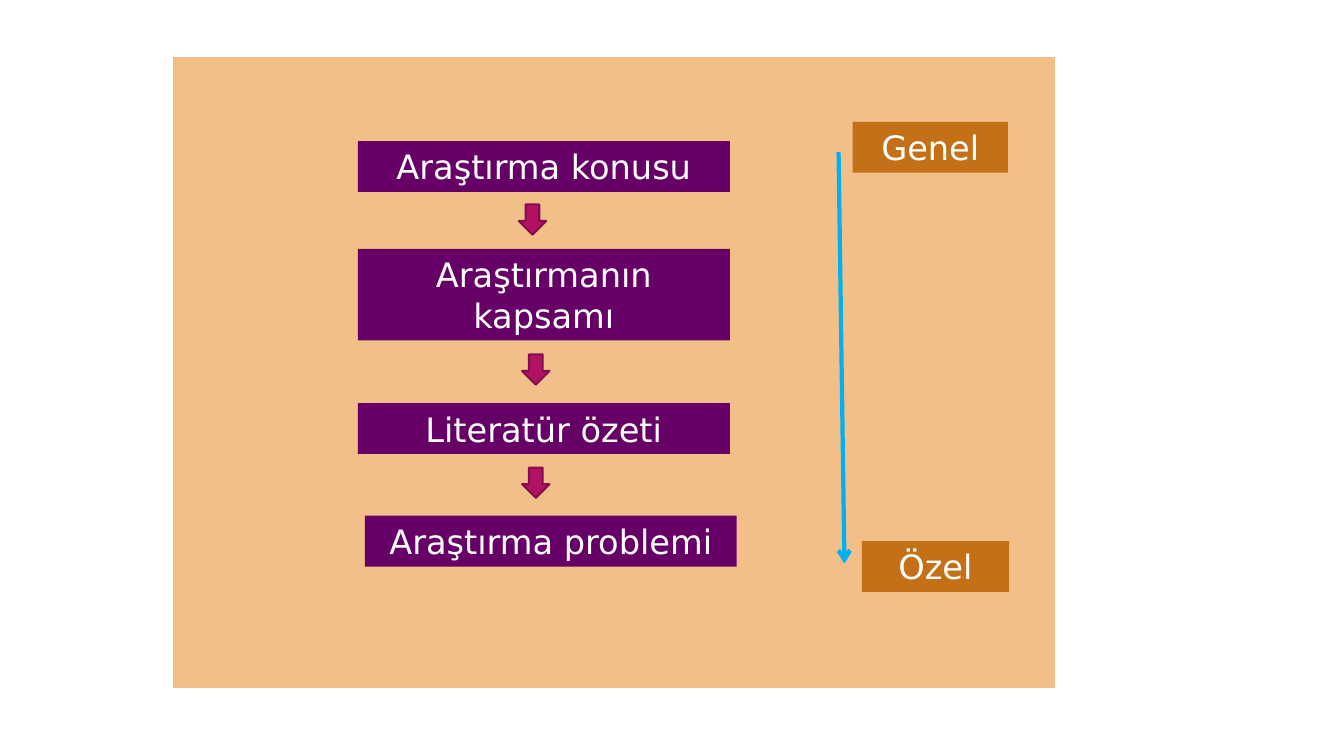
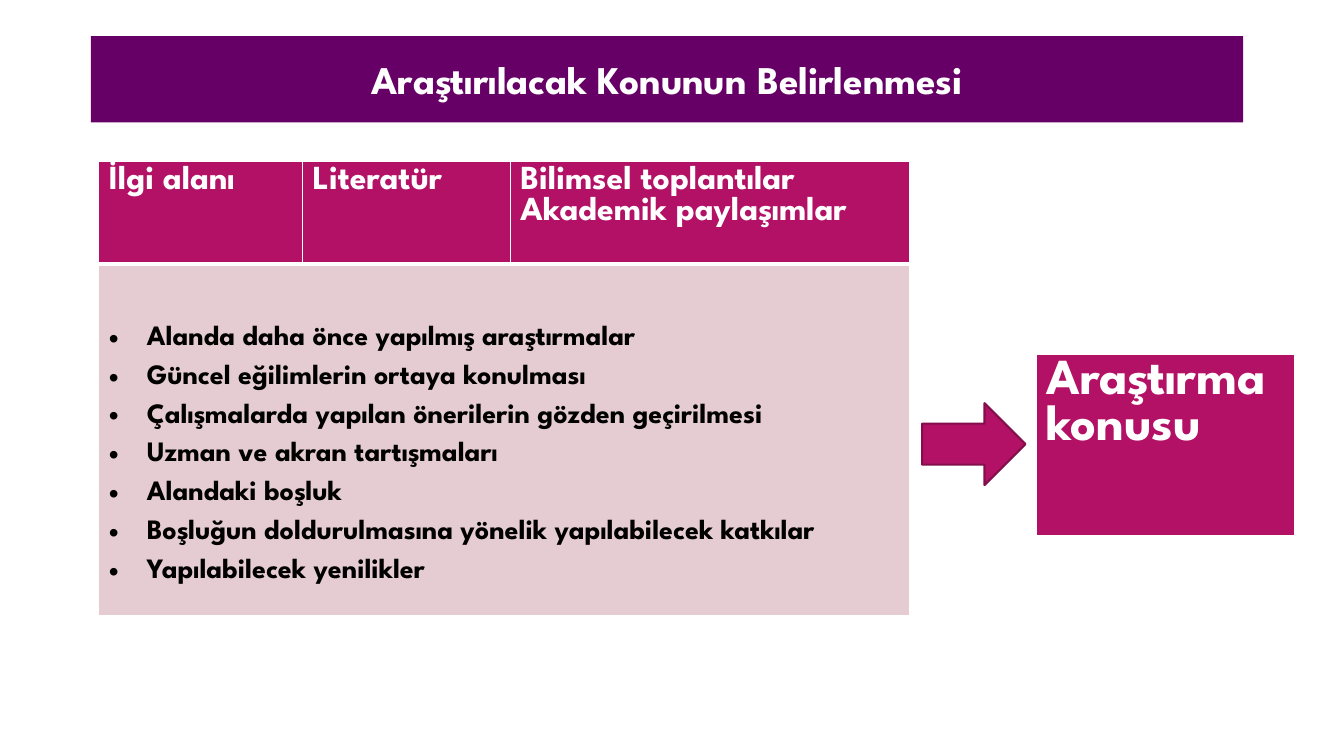
from dataclasses import dataclass

from lxml import etree
from pptx import Presentation
from pptx.dml.color import RGBColor
from pptx.enum import shapes, text
from pptx.oxml import ns
from pptx.util import Pt


@dataclass(frozen=True)
class Theme:
    white: str = "FFFFFF"
    black: str = "000000"
    purple: str = "660066"
    magenta: str = "B31166"
    magenta_edge: str = "840D4B"
    sand: str = "F2BF89"
    ochre: str = "C47016"
    rose: str = "E5CCD3"
    sky: str = "00B0F0"
    label_font: str = "DejaVu Sans"
    text_font: str = "League Spartan"
    title_size: int = 28
    label_size: int = 24
    list_size: int = 20
    result_size: int = 36


THEME = Theme()
TITLE_ONLY, BLANK = 5, 6
THIN, THICK = 1, 3


def color(value):
    return RGBColor.from_string(value)


def points(*lengths):
    return [Pt(length) for length in lengths]


def add_xml(parent, tag, **attributes):
    return etree.SubElement(parent, ns.qn(tag), attributes)


class Slides:
    def __init__(self, theme):
        self.theme = theme
        self.deck = Presentation()
        self.deck.slide_width, self.deck.slide_height = points(960, 540)
        self.page = None

    def new_page(self, layout):
        self.page = self.deck.slides.add_slide(self.deck.slide_layouts[layout])

    def fill(self, target, value):
        target.fill.solid()
        target.fill.fore_color.rgb = color(value)

    def format_text(self, frame, font, size, ink, bold=False, align=None):
        for para in frame.paragraphs:
            para.alignment = align
            for span in para.runs:
                span.font.name = font
                span.font.size = Pt(size)
                span.font.bold = bold
                span.font.color.rgb = color(ink)

    def title(self, words, place):
        box = self.page.shapes.title
        box.left, box.top, box.width, box.height = points(*place)
        self.fill(box, self.theme.purple)
        frame = box.text_frame
        frame.text = words
        frame.word_wrap = True
        frame.auto_size = text.MSO_AUTO_SIZE.NONE
        frame.vertical_anchor = text.MSO_ANCHOR.MIDDLE
        self.format_text(frame, self.theme.text_font, self.theme.title_size,
                         self.theme.white, True, text.PP_ALIGN.CENTER)

    def shape(self, kind, place, fill, edge=None):
        shape = self.page.shapes.add_shape(kind, *points(*place))
        shape.shadow.inherit = False
        self.fill(shape, fill)
        if edge:
            shape.line.color.rgb = color(edge)
            shape.line.width = Pt(1.5)
        else:
            shape.line.fill.background()
        return shape

    def label(self, words, place, fill):
        box = self.shape(shapes.MSO_SHAPE.RECTANGLE, place, fill)
        box.text_frame.text = words
        box.text_frame.word_wrap = True
        self.format_text(box.text_frame, self.theme.label_font, self.theme.label_size,
                         self.theme.white, align=text.PP_ALIGN.CENTER)

    def block_arrow(self, kind, place):
        self.shape(kind, place, self.theme.magenta, self.theme.magenta_edge)

    def line_arrow(self, start, end):
        line = self.page.shapes.add_connector(
            shapes.MSO_CONNECTOR.STRAIGHT, *points(*start, *end))
        line.line.color.rgb = color(self.theme.sky)
        line.line.width = Pt(3)
        add_xml(line.line._get_or_add_ln(), "a:tailEnd", type="arrow")
        add_xml(line._element.spPr, "a:effectLst")

    def table(self, left, top, widths, heights):
        frame = self.page.shapes.add_table(
            len(heights), len(widths), *points(left, top, sum(widths), sum(heights)))
        table = frame.table
        for column, width in zip(table.columns, widths):
            column.width = Pt(width)
        for row, height in zip(table.rows, heights):
            row.height = Pt(height)
        return table

    def cell(self, cell, fill, bottom=THICK, top=THIN):
        """Fill a cell and give it white borders."""
        properties = cell._tc.get_or_add_tcPr()
        borders = {"a:lnL": THIN, "a:lnR": THIN, "a:lnT": top, "a:lnB": bottom}
        for tag, width in borders.items():
            border = add_xml(properties, tag, w=str(Pt(width)))
            add_xml(add_xml(border, "a:solidFill"), "a:srgbClr", val=self.theme.white)
        self.fill(cell, fill)

    def cell_text(self, cell, words, size, ink):
        cell.text_frame.text = words
        self.format_text(cell.text_frame, self.theme.text_font, size, ink, True)

    def bullets(self, frame):
        for para in frame.paragraphs:
            properties = para._p.get_or_add_pPr()
            properties.set("marL", str(Pt(27)))
            properties.set("indent", str(Pt(-27)))
            add_xml(properties, "a:buFont", typeface="Arial")
            add_xml(properties, "a:buChar", char="•")
            para.line_spacing = 1.5


def build_funnel(slides):
    theme = slides.theme
    slides.new_page(BLANK)
    panel = slides.table(122.8, 40.5, [631], [452])
    slides.cell(panel.cell(0, 0), theme.sand)

    steps = [("Araştırma konusu", 255.6, 100.8, 36.35),
             ("Araştırmanın kapsamı", 255.6, 177.8, 65.4),
             ("Literatür özeti", 255.6, 288, 36.35),
             ("Araştırma problemi", 260.6, 368.4, 36.35)]
    for words, left, top, height in steps:
        slides.label(words, (left, top, 265.7, height), theme.purple)
    for left, top in [(370.6, 146), (373, 253.2), (373, 334)]:
        slides.block_arrow(shapes.MSO_SHAPE.DOWN_ARROW, (left, top, 19.5, 21.6))

    slides.line_arrow((599, 108.7), (603.2, 402.5))
    slides.label("Genel", (609.1, 87, 110.8, 36.35), theme.ochre)
    slides.label("Özel", (615.6, 386.5, 105.2, 36.35), theme.ochre)


def build_topic_choice(slides):
    theme = slides.theme
    slides.new_page(TITLE_ONLY)
    slides.title("Araştırılacak Konunun Belirlenmesi", (65, 25.8, 823, 61.7))

    sources = slides.table(70.6, 115, [145.5, 148.5, 285], [73.5, 251])
    headings = ["İlgi alanı", "Literatür", "Bilimsel toplantılar\nAkademik paylaşımlar"]
    body = sources.cell(1, 0)
    body.merge(sources.cell(1, 2))
    for column, words in enumerate(headings):
        heading = sources.cell(0, column)
        slides.cell(heading, theme.magenta)
        slides.cell_text(heading, words, theme.label_size, theme.white)
        slides.cell(sources.cell(1, column), theme.rose, THIN, THICK)
    points_to_check = ["Alanda daha önce yapılmış araştırmalar",
                       "Güncel eğilimlerin ortaya konulması",
                       "Çalışmalarda yapılan önerilerin gözden geçirilmesi",
                       "Uzman ve akran tartışmaları",
                       "Alandaki boşluk",
                       "Boşluğun doldurulmasına yönelik yapılabilecek katkılar",
                       "Yapılabilecek yenilikler"]
    slides.cell_text(body, "\n".join(points_to_check), theme.list_size, theme.black)
    slides.bullets(body.text_frame)
    body.margin_top = Pt(35)

    slides.block_arrow(shapes.MSO_SHAPE.RIGHT_ARROW, (658.7, 288, 73.8, 58.5))
    result = slides.table(740, 252.8, [185], [130.5]).cell(0, 0)
    slides.cell(result, theme.magenta)
    slides.cell_text(result, "Araştırma konusu", theme.result_size, theme.white)


def main():
    slides = Slides(THEME)
    build_funnel(slides)
    build_topic_choice(slides)
    slides.deck.save("out.pptx")


if __name__ == "__main__":
    main()
